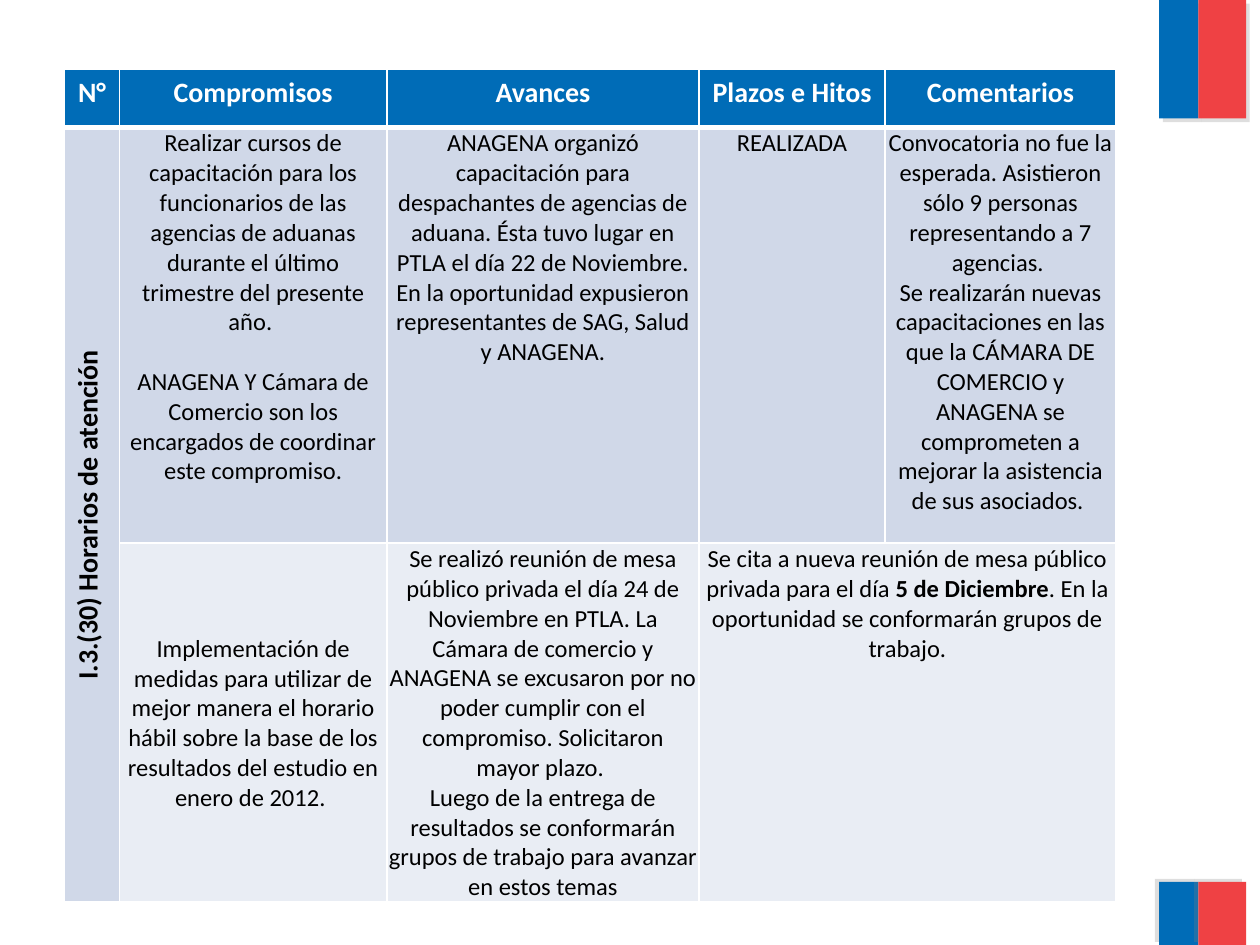
from dataclasses import dataclass

from lxml.etree import SubElement
from pptx import Presentation
from pptx.dml.color import RGBColor
from pptx.enum.shapes import MSO_SHAPE
from pptx.enum.text import MSO_ANCHOR, PP_ALIGN
from pptx.oxml import parse_xml
from pptx.oxml.ns import nsdecls, qn
from pptx.util import Pt


@dataclass(frozen=True)
class Theme:
    """Colours, font and type sizes of the slide."""
    blue: str = "006CB7"
    red: str = "EF4144"
    shade: str = "808080"
    white: str = "FFFFFF"
    black: str = "000000"
    band_dark: str = "D0D8E8"
    band_light: str = "E9EDF4"
    font: str = "Calibri"
    head_size: int = 16
    body_size: int = 14


THEME = Theme()
COLUMNS = (31.4, 152.8, 178.4, 106.4, 131.8)
ROWS = (33, 237.6, 202.4)
HEADERS = ("N°", "Compromisos", "Avances", "Plazos e Hitos", "Comentarios")
TOPIC = "I.3.(30) Horarios de atención"
COURSES = (
    ("Realizar cursos de capacitación para los funcionarios de las agencias de aduanas "
     "durante el último trimestre del presente año. ",
     "ANAGENA Y Cámara de Comercio son los encargados de coordinar este compromiso."),
    ("ANAGENA organizó capacitación para despachantes de agencias de aduana. Ésta tuvo lugar "
     "en PTLA el día 22 de Noviembre. En la oportunidad expusieron representantes de SAG, "
     "Salud y ANAGENA.",),
    ("REALIZADA",),
    ("Convocatoria no fue la esperada. Asistieron sólo 9 personas representando a 7 agencias. ",
     "Se realizarán nuevas capacitaciones en las que la CÁMARA DE COMERCIO y ANAGENA se "
     "comprometen a mejorar la asistencia de sus asociados. "),
)
MEASURES = (
    ("Implementación de medidas para utilizar de mejor manera el horario hábil sobre la base "
     "de los resultados del estudio en enero de 2012. ",),
    ("Se realizó reunión de mesa público privada el día 24 de Noviembre en PTLA. La Cámara de "
     "comercio y ANAGENA se excusaron por no poder cumplir con el compromiso. Solicitaron "
     "mayor plazo. ",
     "Luego de la entrega de resultados se conformarán grupos de trabajo para avanzar en "
     "estos temas"),
    ("Se cita a nueva reunión de mesa público privada para el día **5 de Diciembre**. En la "
     "oportunidad se conformarán grupos de trabajo.",),
)


def rgb(color):
    """Return the RGBColor of a hex string."""
    return RGBColor.from_string(color)


def add_shadow(s, angle):
    """Give a shape a hard, faint shadow in the given direction."""
    s.shadow.inherit = False
    effects = s._element.spPr.find(qn("a:effectLst"))
    shadow = SubElement(effects, qn("a:outerShdw"), dist=str(Pt(3)),
                        dir=str(angle * 60000), algn="ctr", rotWithShape="0")
    color = SubElement(shadow, qn("a:srgbClr"), val=THEME.shade)
    SubElement(color, qn("a:alpha"), val="25000")


def add_stripes(slide, left, top, width, height, angle):
    """Draw a blue and a red bar side by side in the given box."""
    split = width * 0.45
    bars = ((left, split, THEME.blue), (left + split, width - split, THEME.red))
    for x, w, color in bars:
        s = slide.shapes.add_shape(MSO_SHAPE.RECTANGLE, Pt(x), Pt(top), Pt(w), Pt(height))
        s.fill.solid()
        s.fill.fore_color.rgb = rgb(color)
        s.line.fill.background()
        add_shadow(s, angle)


def set_borders(cell, bottom):
    """Put white lines around a cell, with the bottom one of the given width."""
    tcPr = cell._tc.get_or_add_tcPr()
    for i, (side, width) in enumerate((("L", 1), ("R", 1), ("T", 1), ("B", bottom))):
        tcPr.insert(i, parse_xml(
            f'<a:ln{side} {nsdecls("a")} w="{Pt(width)}"><a:solidFill>'
            f'<a:srgbClr val="{THEME.white}"/></a:solidFill></a:ln{side}>'))


def style_cell(cell, fill, bottom=1):
    """Fill and outline a cell."""
    cell.fill.solid()
    cell.fill.fore_color.rgb = rgb(fill)
    set_borders(cell, bottom)


def write_heading(cell, text, color):
    """Write a bold, centred heading in a cell."""
    p = cell.text_frame.paragraphs[0]
    p.text = text
    p.alignment = PP_ALIGN.CENTER
    p.font.name, p.font.size, p.font.bold = THEME.font, Pt(THEME.head_size), True
    p.font.color.rgb = rgb(color)


def write_body(cell, paragraphs, gap=0):
    """Write centred paragraphs in a cell; text between ** is bold."""
    cell.margin_left = cell.margin_right = cell.margin_top = Pt(0.72)
    cell.margin_bottom = Pt(0)
    tf = cell.text_frame
    for i, text in enumerate(paragraphs):
        p = tf.add_paragraph() if i else tf.paragraphs[0]
        p.alignment = PP_ALIGN.CENTER
        p.space_before = Pt(gap if i else 0)
        p.font.name, p.font.size = THEME.font, Pt(THEME.body_size)
        p.font.color.rgb = rgb(THEME.black)
        for j, part in enumerate(text.split("**")):
            r = p.add_run()
            r.text = part
            r.font.bold = j % 2 == 1


def add_commitments(slide, left, top):
    """Build the table of commitments with its top left corner at the given point."""
    table = slide.shapes.add_table(len(ROWS), len(COLUMNS), Pt(left), Pt(top),
                                   Pt(sum(COLUMNS)), Pt(sum(ROWS))).table
    for column, width in zip(table.columns, COLUMNS):
        column.width = Pt(width)
    for row, height in zip(table.rows, ROWS):
        row.height = Pt(height)
    for c, text in enumerate(HEADERS):
        style_cell(table.cell(0, c), THEME.blue, bottom=3)
        write_heading(table.cell(0, c), text, THEME.white)
        style_cell(table.cell(1, c), THEME.band_dark)
        style_cell(table.cell(2, c), THEME.band_light if c else THEME.band_dark)

    topic = table.cell(1, 0)
    topic.merge(table.cell(2, 0))
    write_heading(topic, TOPIC, THEME.black)
    topic._tc.get_or_add_tcPr().set("vert", "vert270")

    table.cell(2, 3).merge(table.cell(2, 4))
    for c, paragraphs in enumerate(COURSES, start=1):
        write_body(table.cell(1, c), paragraphs, gap=17 if c == 1 else 0)
    for c, paragraphs in enumerate(MEASURES, start=1):
        write_body(table.cell(2, c), paragraphs)
    table.cell(2, 1).vertical_anchor = MSO_ANCHOR.MIDDLE


def main():
    """Build and save the slide."""
    prs = Presentation()
    prs.slide_width, prs.slide_height = Pt(720), Pt(540)
    slide = prs.slides.add_slide(prs.slide_layouts[6])
    add_stripes(slide, 662.4, 0, 49.7, 67.7, 45)
    add_stripes(slide, 662.4, 504, 49.7, 36, 215)
    add_commitments(slide, 36.9, 39.8)
    prs.save("out.pptx")


if __name__ == "__main__":
    main()
